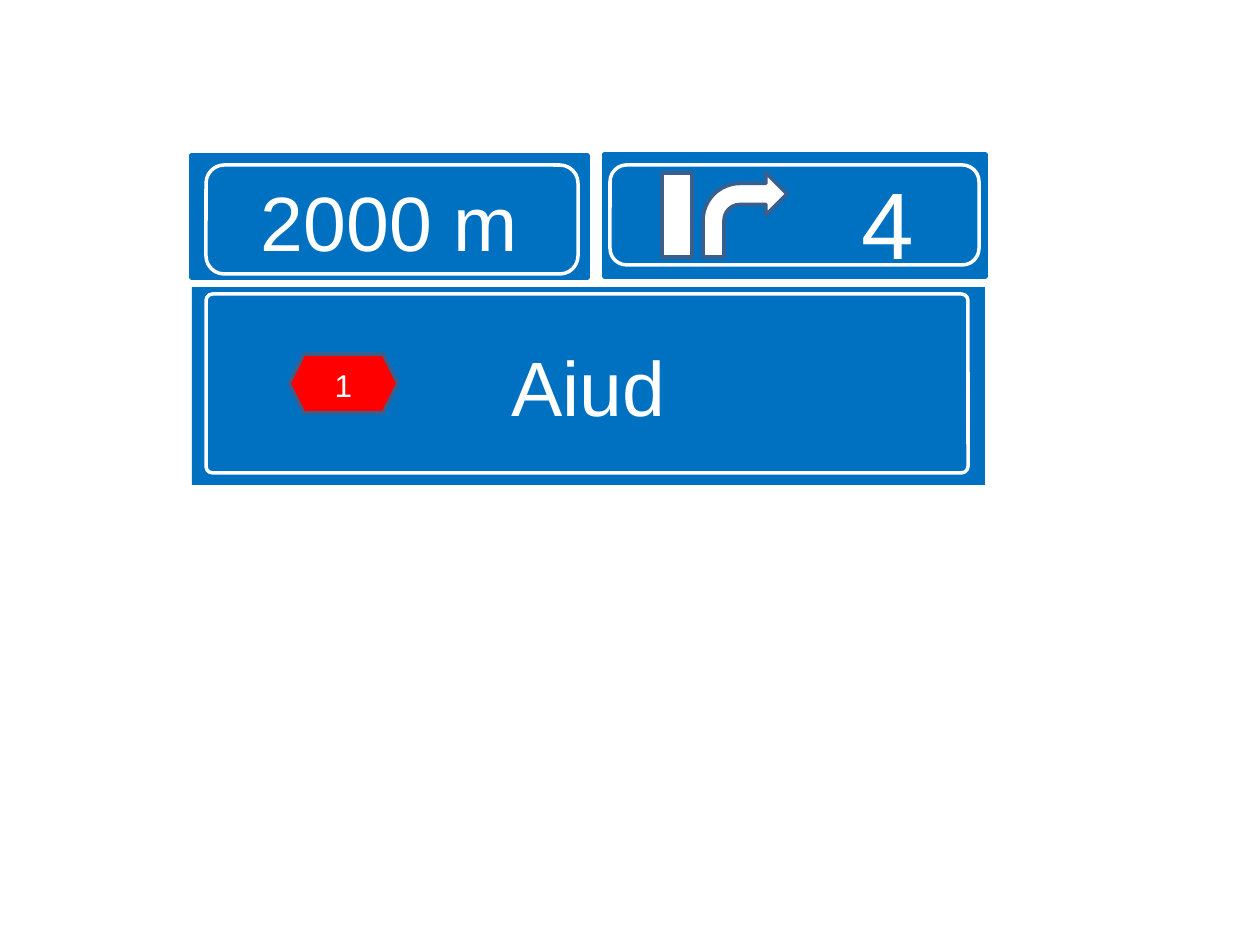
from pptx import Presentation
from pptx import util as u
from pptx.dml.color import RGBColor
from pptx.enum import shapes, text

PX = u.Inches(1) / 126
BLUE, WHITE, RED, EDGE = "0070C0", "FFFFFF", "FF0000", "3A5F8C"
KIND = shapes.MSO_SHAPE


def px(length):
    return u.Emu(round(length * PX))


def colour(value):
    return RGBColor.from_string(value)


class SignPainter:
    """Draws road sign parts on one slide in a shared style."""

    def __init__(self, page, font="Arial", line_width=2):
        self.page = page
        self.font = font
        self.line_width = line_width

    def shape(self, kind, place, fill=None, line=None, adjust=()):
        box = self.page.shapes.add_shape(kind, *map(px, place))
        box.shadow.inherit = False
        for index, value in enumerate(adjust):
            box.adjustments[index] = value
        if fill:
            box.fill.solid()
            box.fill.fore_color.rgb = colour(fill)
        else:
            box.fill.background()
        if line:
            box.line.color.rgb = colour(line)
            box.line.width = u.Pt(self.line_width)
        else:
            box.line.fill.background()
        return box

    def panel(self, place):
        return self.shape(KIND.ROUNDED_RECTANGLE, place, BLUE, BLUE, [0])

    def border(self, place, radius=0.167):
        return self.shape(KIND.ROUNDED_RECTANGLE, place, line=WHITE, adjust=[radius])

    def label(self, box, words, size, left=0, top=0, right=0):
        frame = box.text_frame
        layout = {
            "margin_left": px(left),
            "margin_top": px(top),
            "margin_right": px(right),
            "margin_bottom": 0,
            "vertical_anchor": text.MSO_ANCHOR.MIDDLE,
            "word_wrap": True,
        }
        for name, value in layout.items():
            setattr(frame, name, value)
        para = frame.paragraphs[0]
        para.alignment = text.PP_ALIGN.CENTER
        span = para.add_run()
        span.text = words
        for name, value in {"name": self.font, "size": u.Pt(size)}.items():
            setattr(span.font, name, value)
        span.font.color.rgb = colour(WHITE)


def main():
    deck = Presentation()
    deck.slide_width, deck.slide_height = px(1260), px(945)
    sign = SignPainter(deck.slides.add_slide(deck.slide_layouts[6]))

    town = sign.shape(KIND.RECTANGLE, (192, 287, 793, 198), BLUE)
    sign.label(town, "Aiud", 44)
    sign.border((206, 294, 762, 179), 0.037)

    junction = sign.panel((604, 154, 382, 123))
    sign.label(junction, "4", 54, left=198, top=12, right=13)
    sign.shape(KIND.RECTANGLE, (662, 173, 30, 84), WHITE, EDGE)
    sign.shape(KIND.BENT_ARROW, (703, 173, 84, 84), WHITE, EDGE,
               [0.25, 0.25, 0.25, 0.44])
    sign.border((610, 165, 369, 100))

    distance = sign.panel((191, 155, 397, 123))
    sign.label(distance, "2000 m", 44, top=8)
    sign.border((206, 165, 372, 109))

    road = sign.shape(KIND.HEXAGON, (289, 354, 109, 59), RED, EDGE)
    sign.label(road, "1", 18, top=3)

    deck.save("out.pptx")


if __name__ == "__main__":
    main()
